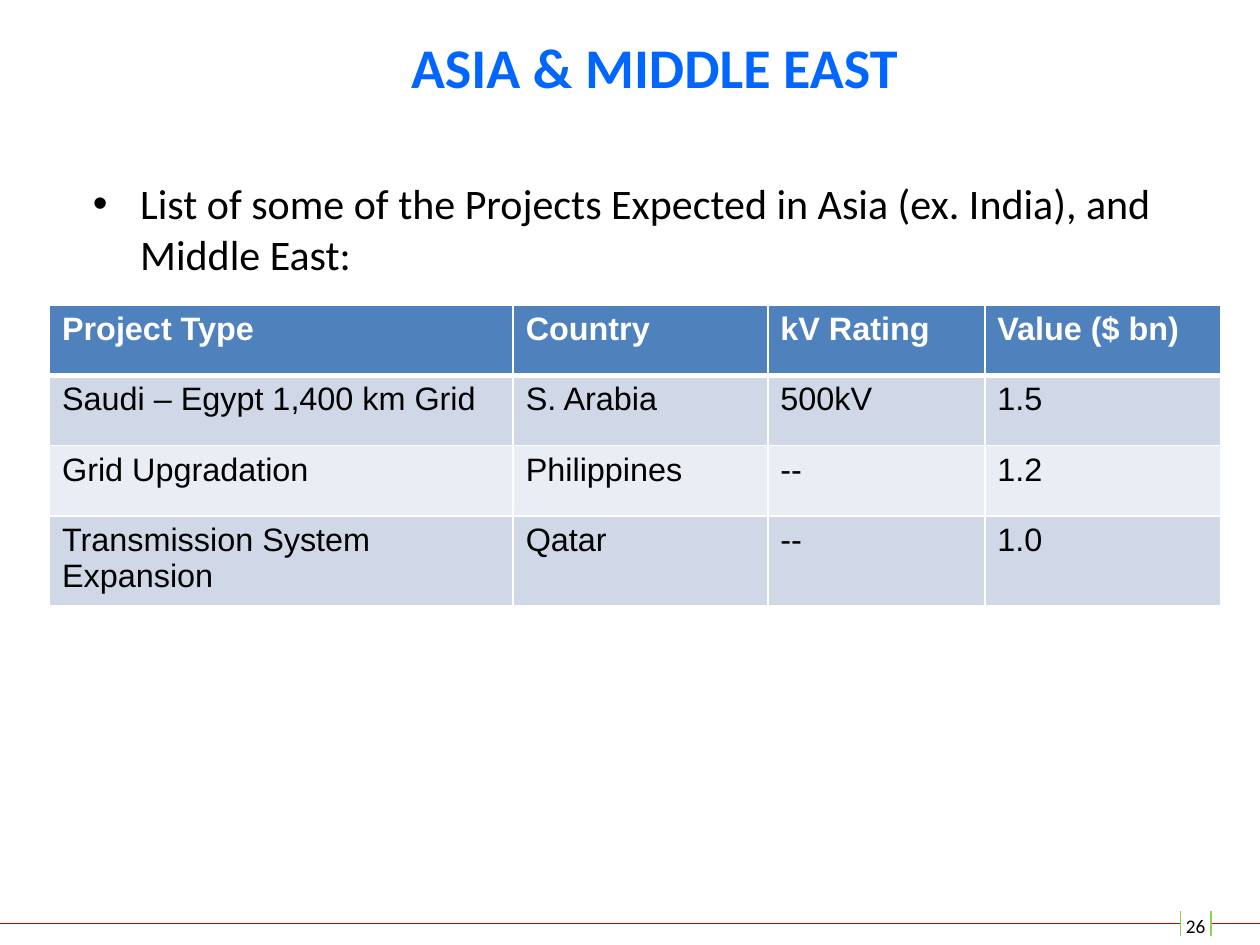
from lxml import etree
from pptx import Presentation
from pptx.dml.color import RGBColor
from pptx.enum.shapes import MSO_CONNECTOR
from pptx.enum.text import MSO_ANCHOR, PP_ALIGN
from pptx.oxml.ns import qn
from pptx.util import Pt

STRAIGHT = MSO_CONNECTOR.STRAIGHT
MIDDLE = MSO_ANCHOR.MIDDLE
CENTER = PP_ALIGN.CENTER
LEFT = PP_ALIGN.LEFT

WHITE, BLACK, BLUE = "FFFFFF", "000000", "0066FF"
RED, GREEN = "CC0000", "92D050"
HEADER_FILL, BAND_FILLS = "4F81BD", ("D0D8E8", "E9EDF4")

PROJECTS = [
    ("Project Type", "Country", "kV Rating", "Value ($ bn)"),
    ("Saudi – Egypt 1,400 km Grid", "S. Arabia", "500kV", "1.5"),
    ("Grid Upgradation", "Philippines", "--", "1.2"),
    ("Transmission System Expansion", "Qatar", "--", "1.0"),
]
COLUMN_WIDTHS = (265, 145.5, 124, 135)
ROW_HEIGHT = 40.1


def color(hex_string):
    return RGBColor.from_string(hex_string)


def set_font(paragraph, name, size, hex_string, bold=False):
    font = paragraph.font
    font.name, font.size, font.bold = name, Pt(size), bold
    font.color.rgb = color(hex_string)


def add_line(slide, start, end, hex_string):
    line = slide.shapes.add_connector(STRAIGHT, *map(Pt, start + end))
    line.line.color.rgb = color(hex_string)
    line.line.width = Pt(0.75)
    etree.SubElement(line._element.spPr, qn("a:effectLst"))


def add_text(slide, box, text, margins, alignment=LEFT, anchor=None):
    shape = slide.shapes.add_textbox(*map(Pt, box))
    frame = shape.text_frame
    frame.word_wrap = True
    frame.vertical_anchor = anchor
    (frame.margin_left, frame.margin_top,
     frame.margin_right, frame.margin_bottom) = map(Pt, margins)
    paragraph = frame.paragraphs[0]
    paragraph.text = text
    paragraph.alignment = alignment
    return shape, paragraph


def add_bullet(paragraph, indent):
    properties = paragraph._p.get_or_add_pPr()
    properties.set("marL", str(Pt(indent)))
    properties.set("indent", str(-Pt(indent)))
    etree.SubElement(properties, qn("a:buFont"), typeface="Arial")
    etree.SubElement(properties, qn("a:buChar"), char="•")


def set_borders(cell, widths):
    """Draw white borders; they come before the fill in the cell properties."""
    properties = cell._tc.get_or_add_tcPr()
    for index, (side, width) in enumerate(widths.items()):
        border = etree.Element(qn(f"a:ln{side}"), w=str(Pt(width)))
        fill = etree.SubElement(border, qn("a:solidFill"))
        etree.SubElement(fill, qn("a:srgbClr"), val=WHITE)
        properties.insert(index, border)


def add_project_table(slide, left, top):
    row_count = len(PROJECTS)
    frame = slide.shapes.add_table(
        row_count, len(COLUMN_WIDTHS), Pt(left), Pt(top),
        Pt(sum(COLUMN_WIDTHS)), Pt(ROW_HEIGHT * row_count))
    table = frame.table
    for column, width in zip(table.columns, COLUMN_WIDTHS):
        column.width = Pt(width)
    for row_index, values in enumerate(PROJECTS):
        table.rows[row_index].height = Pt(ROW_HEIGHT)
        header = row_index == 0
        fill = HEADER_FILL if header else BAND_FILLS[(row_index - 1) % 2]
        widths = {"L": 1, "R": 1, "T": 3 if row_index == 1 else 1,
                  "B": 3 if header else 1}
        for column_index, value in enumerate(values):
            cell = table.cell(row_index, column_index)
            cell.text = value
            cell.fill.solid()
            cell.fill.fore_color.rgb = color(fill)
            set_borders(cell, widths)
            set_font(cell.text_frame.paragraphs[0], "Arial", 18.5,
                     WHITE if header else BLACK, header)


def add_footer(slide):
    rule_y, gap_left, gap_right = 527.8, 674.6, 692
    add_line(slide, (0, rule_y), (gap_left, rule_y), RED)
    add_line(slide, (gap_right, rule_y), (720, rule_y), RED)
    for x in (gap_left, gap_right):
        add_line(slide, (x, 535), (x, 520.6), GREEN)
    _, number = add_text(slide, (676, 522, 14.4, 13.7), "26", (0, 0, 0, 0),
                         CENTER, MIDDLE)
    set_font(number, "Calibri", 11, BLACK)


def main():
    presentation = Presentation()
    presentation.slide_width, presentation.slide_height = Pt(720), Pt(540)
    slide = presentation.slides.add_slide(presentation.slide_layouts[6])

    add_footer(slide)

    # Title
    title_box, title = add_text(slide, (124.5, 2.2, 491.8, 71.3),
                                "ASIA & MIDDLE EAST", (14.4, 3.6, 7.2, 3.6),
                                CENTER, MIDDLE)
    title_box.fill.solid()
    title_box.fill.fore_color.rgb = color(WHITE)
    set_font(title, "Calibri", 32, BLUE, True)

    # Introduction
    _, introduction = add_text(
        slide, (46, 98, 642.2, 354.2),
        "List of some of the Projects Expected in Asia (ex. India), "
        "and Middle East:", (7.2, 3.6, 7.2, 3.6))
    add_bullet(introduction, 27)
    set_font(introduction, "Calibri", 24, BLACK)

    add_project_table(slide, 28.3, 174.5)
    presentation.save("out.pptx")


if __name__ == "__main__":
    main()
